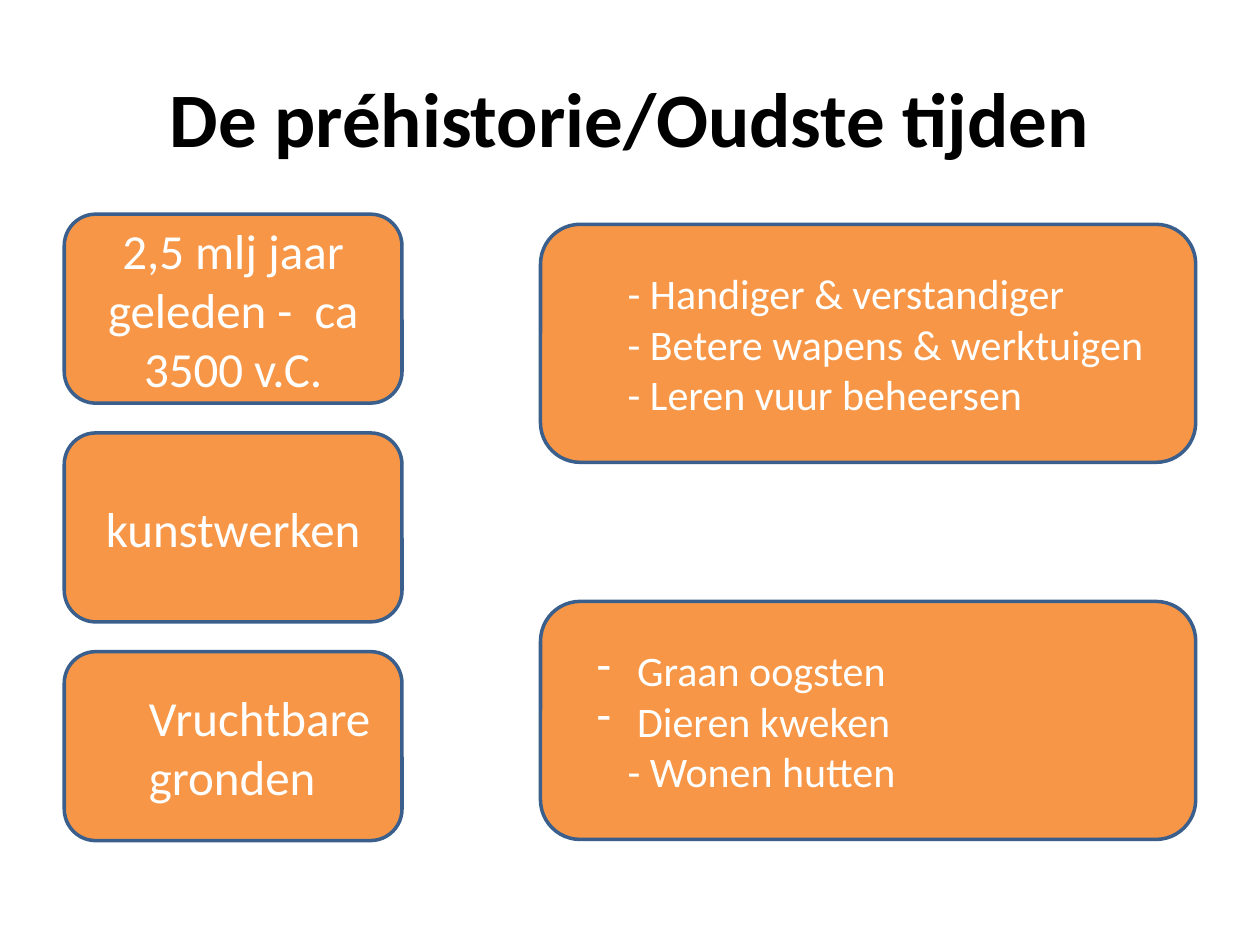
from dataclasses import dataclass

from lxml import etree
from pptx import Presentation
from pptx.dml.color import RGBColor
from pptx.enum.shapes import MSO_SHAPE
from pptx.enum.text import MSO_ANCHOR, PP_ALIGN
from pptx.oxml.ns import qn
from pptx.util import Pt

ROUNDED = MSO_SHAPE.ROUNDED_RECTANGLE
MIDDLE = MSO_ANCHOR.MIDDLE
CENTER, LEFT = PP_ALIGN.CENTER, PP_ALIGN.LEFT


@dataclass(frozen=True)
class Theme:
    font: str = "Calibri"
    ink: RGBColor = RGBColor(0, 0, 0)
    light: RGBColor = RGBColor(255, 255, 255)
    card: RGBColor = RGBColor(0xF7, 0x96, 0x46)
    border: RGBColor = RGBColor(0x3A, 0x5F, 0x8C)
    title_size: Pt = Pt(44)
    fact_size: Pt = Pt(28)
    list_size: Pt = Pt(24)


THEME = Theme()

# Paragraph styles: left margin and first-line indent in points, bullet
CENTERED = None
INDENTED = (36, 0, None)
DASHED = (41.5, -23, "-")

FACTS = [
    [("2,5 mlj jaar geleden -  ca 3500 v.C.", CENTERED)],
    [("kunstwerken", CENTERED)],
    [("Vruchtbare gronden", INDENTED)],
]
DEVELOPMENTS = [
    [("- Handiger & verstandiger", INDENTED),
     ("- Betere wapens & werktuigen", INDENTED),
     ("- Leren vuur beheersen", INDENTED)],
    [("Graan oogsten", DASHED),
     ("Dieren kweken", DASHED),
     ("- Wonen hutten", INDENTED)],
]


def style_paragraph(p, style):
    if style is CENTERED:
        p.alignment = CENTER
        return
    margin, indent, bullet = style
    p.alignment = LEFT
    p.level = 1
    pPr = p._p.get_or_add_pPr()
    pPr.set("marL", str(Pt(margin)))
    pPr.set("indent", str(Pt(indent)))
    if bullet:
        etree.SubElement(pPr, qn("a:buChar")).set("char", bullet)


def write(tf, lines, size, color, bold=False):
    tf.word_wrap = True
    tf.vertical_anchor = MIDDLE
    tf.text = "\n".join(text for text, _ in lines)
    for p, (_, style) in zip(tf.paragraphs, lines):
        style_paragraph(p, style)
        for r in p.runs:
            r.font.name = THEME.font
            r.font.size = size
            r.font.bold = bold
            r.font.color.rgb = color


def add_title(slide, text, left, top, width, height):
    sp = slide.shapes.add_textbox(Pt(left), Pt(top), Pt(width), Pt(height))
    write(sp.text_frame, [(text, CENTERED)], THEME.title_size, THEME.ink, bold=True)


def add_card_column(slide, cards, card_height, size, left, top, width, height):
    """Spread cards of one height evenly over the column."""
    pitch = (height - card_height) / (len(cards) - 1)
    for i, lines in enumerate(cards):
        sp = slide.shapes.add_shape(
            ROUNDED, Pt(left), Pt(top + i * pitch), Pt(width), Pt(card_height))
        sp.shadow.inherit = False
        sp.fill.solid()
        sp.fill.fore_color.rgb = THEME.card
        sp.line.color.rgb = THEME.border
        sp.line.width = Pt(2)
        write(sp.text_frame, lines, size, THEME.light)


def main():
    prs = Presentation()
    prs.slide_width, prs.slide_height = Pt(720), Pt(540)
    slide = prs.slides.add_slide(prs.slide_layouts[6])

    # Title
    add_title(slide, "De préhistorie/Oudste tijden", 36, 21.6, 648, 90)
    # Left column: period and facts
    add_card_column(slide, FACTS, 108, THEME.fact_size, 36.7, 122.4, 193, 358)
    # Right column: developments
    add_card_column(slide, DEVELOPMENTS, 136, THEME.list_size,
                    308.9, 128.2, 374.4, 351.5)

    prs.save("out.pptx")


if __name__ == "__main__":
    main()
